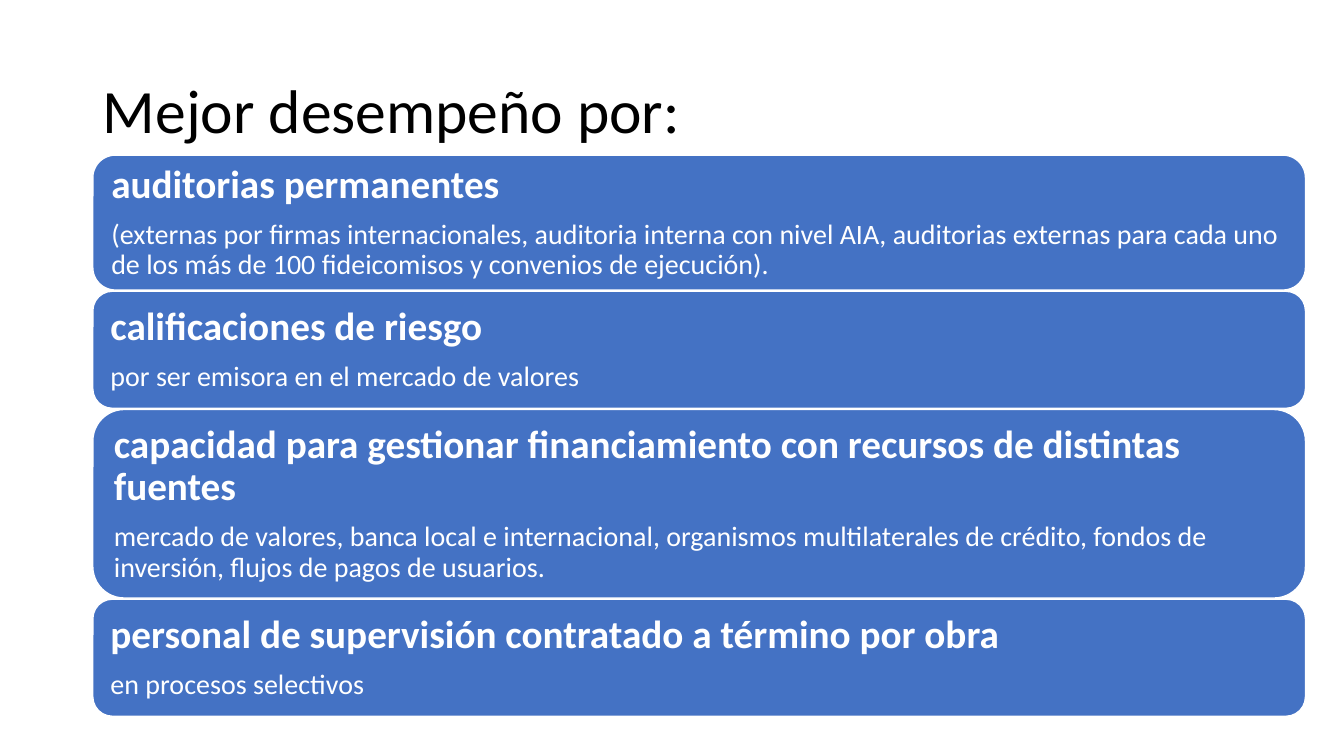
from pptx import Presentation
from pptx import util as u
from pptx.dml.color import RGBColor
from pptx.enum import shapes, text

COLOURS = {"title": "000000", "panel": "4472C4", "light": "FFFFFF"}

LEFT, FIRST_TOP, PANEL_WIDTH, GAP = 2.34, 3.91, 30.56, 0.03

# Height in cm, heading, detail
STRENGTHS = [
    (3.4, "auditorias permanentes",
     "(externas por firmas internacionales, auditoria interna con nivel AIA, "
     "auditorias externas para cada uno de los más de 100 fideicomisos y "
     "convenios de ejecución)."),
    (2.95, "calificaciones de riesgo",
     "por ser emisora en el mercado de valores"),
    (4.75, "capacidad para gestionar financiamiento con recursos de distintas fuentes",
     "mercado de valores, banca local e internacional, organismos "
     "multilaterales de crédito, fondos de inversión, flujos de pagos de usuarios."),
    (2.95, "personal de supervisión contratado a término por obra",
     "en procesos selectivos"),
]


class SlideBuilder:
    font_name = "Calibri"
    line_spacing = 0.9

    def __init__(self, presentation):
        self.slide = presentation.slides.add_slide(presentation.slide_layouts[5])

    def colour(self, name):
        return RGBColor.from_string(COLOURS[name])

    def style(self, paragraph, size, colour, bold=False):
        paragraph.alignment = text.PP_ALIGN.LEFT
        paragraph.line_spacing = self.line_spacing
        font = paragraph.font
        font.name, font.size, font.bold = self.font_name, u.Pt(size), bold
        font.color.rgb = self.colour(colour)

    def title(self, wording, left, top, width, height):
        title = self.slide.shapes.title
        title.left, title.top = u.Cm(left), u.Cm(top)
        title.width, title.height = u.Cm(width), u.Cm(height)
        frame = title.text_frame
        frame.text = wording
        frame.vertical_anchor = text.MSO_ANCHOR.MIDDLE
        self.style(frame.paragraphs[0], 44, "title")

    def panel(self, heading, detail, left, top, width, height):
        panel = self.slide.shapes.add_shape(
            shapes.MSO_SHAPE.ROUNDED_RECTANGLE,
            u.Cm(left), u.Cm(top), u.Cm(width), u.Cm(height))
        panel.shadow.inherit = False
        panel.fill.solid()
        panel.fill.fore_color.rgb = self.colour("panel")
        panel.line.color.rgb = self.colour("light")
        panel.line.width = u.Pt(1)

        frame = panel.text_frame
        frame.word_wrap = True
        frame.vertical_anchor = text.MSO_ANCHOR.MIDDLE
        frame.margin_left = frame.margin_right = u.Cm(0.3)
        frame.margin_top = frame.margin_bottom = u.Cm(0.3)
        frame.text = f"{heading}\n{detail}"
        heading_line, detail_line = frame.paragraphs
        self.style(heading_line, 28, "light", bold=True)
        heading_line.space_after = u.Pt(9.8)
        self.style(detail_line, 20, "light")


def main():
    presentation = Presentation()
    presentation.slide_width, presentation.slide_height = u.Cm(33.87), u.Cm(19.05)
    builder = SlideBuilder(presentation)
    builder.title("Mejor desempeño por:", LEFT, 1.01, 29.21, 3.68)

    top = FIRST_TOP
    for height, heading, detail in STRENGTHS:
        builder.panel(heading, detail, LEFT, top, PANEL_WIDTH, height)
        top += height + GAP

    presentation.save("out.pptx")


if __name__ == "__main__":
    main()
